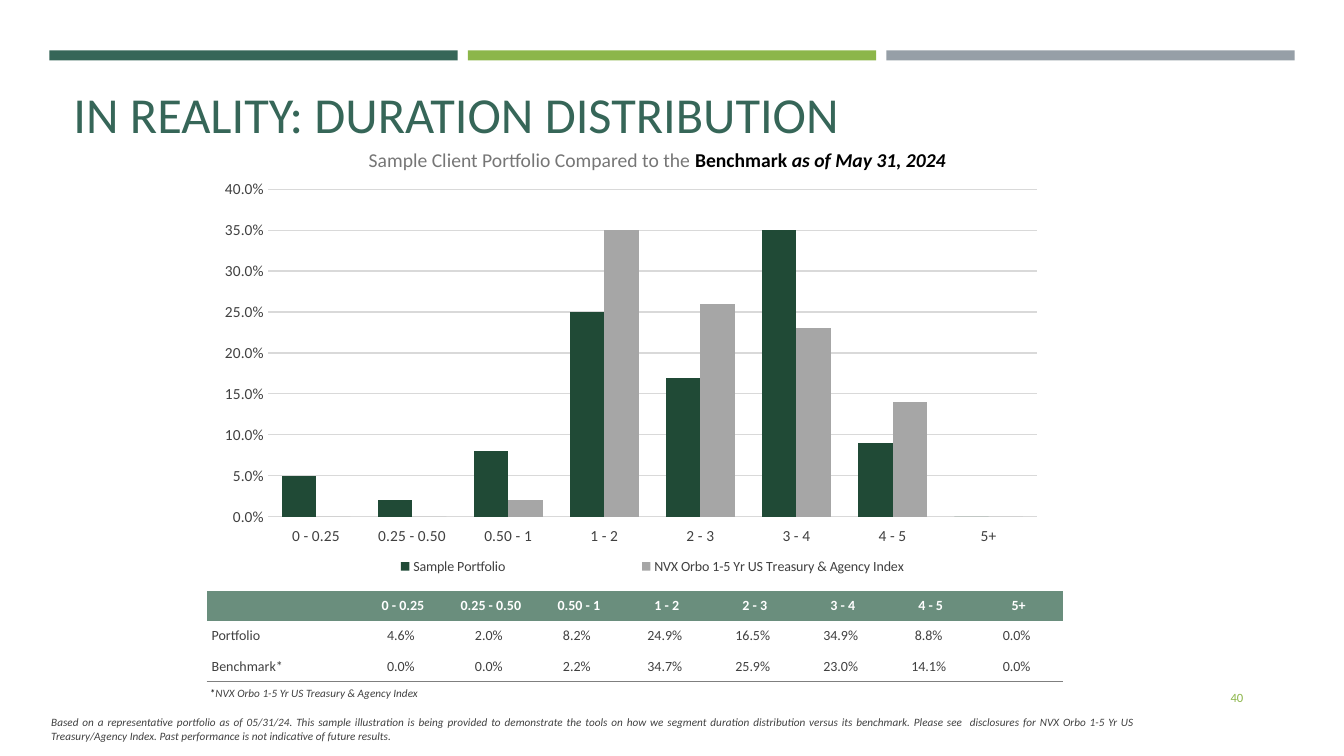
from lxml import etree
from pptx import Presentation
from pptx.chart.data import CategoryChartData
from pptx.dml.color import RGBColor
from pptx.enum.chart import XL_CHART_TYPE, XL_LEGEND_POSITION, XL_TICK_LABEL_POSITION, XL_TICK_MARK
from pptx.enum.shapes import MSO_SHAPE
from pptx.enum.text import MSO_ANCHOR, PP_ALIGN
from pptx.oxml.ns import qn
from pptx.util import Inches, Pt

COLUMNS = XL_CHART_TYPE.COLUMN_CLUSTERED
LEGEND_BOTTOM = XL_LEGEND_POSITION.BOTTOM
LABELS_LOW = XL_TICK_LABEL_POSITION.LOW
NO_TICK = XL_TICK_MARK.NONE
RECT = MSO_SHAPE.RECTANGLE
TOP, MIDDLE, BOTTOM = MSO_ANCHOR.TOP, MSO_ANCHOR.MIDDLE, MSO_ANCHOR.BOTTOM
LEFT, CENTER, RIGHT, JUSTIFY = PP_ALIGN.LEFT, PP_ALIGN.CENTER, PP_ALIGN.RIGHT, PP_ALIGN.JUSTIFY

FONT = "Calibri"
NO_STYLE = "{2D5ABB26-0587-4C30-8999-92F81FD0307C}"
COLORS = {
    "green": "366658", "lime": "8CB64A", "slate": "969FA7", "header": "6A8E7D",
    "portfolio": "204A36", "benchmark": "A6A6A6", "text": "404040", "subtitle": "767676",
    "black": "000000", "white": "FFFFFF", "grid": "D9D9D9", "rule": "7F7F7F",
}
INDEX = "NVX Orbo 1-5 Yr US Treasury & Agency Index"
BUCKETS = ["0 - 0.25", "0.25 - 0.50", "0.50 - 1", "1 - 2", "2 - 3", "3 - 4", "4 - 5", "5+"]
PORTFOLIO = [0.046, 0.02, 0.082, 0.249, 0.165, 0.349, 0.088, 0]
BENCHMARK = [0, 0, 0.022, 0.347, 0.259, 0.23, 0.141, 0]
DISCLOSURE = (
    "Based on a representative portfolio as of 05/31/24. This sample illustration is being "
    "provided to demonstrate the tools on how we segment duration distribution versus its "
    "benchmark. Please see  disclosures for NVX Orbo 1-5 Yr US Treasury/Agency Index. "
    "Past performance is not indicative of future results."
)


def rgb(name):
    """Return the named colour."""
    return RGBColor.from_string(COLORS[name])


def style_font(font, size, color, bold=False, italic=False):
    """Format a font."""
    font.name, font.size, font.bold, font.italic = FONT, Pt(size), bold, italic
    font.color.rgb = rgb(color)


def add_run(p, text, size=10, color="text", bold=False, italic=False):
    """Add formatted text to a paragraph."""
    r = p.add_run()
    r.text = text
    style_font(r.font, size, color, bold, italic)


def add_text(s, box, align=LEFT, anchor=TOP, inset=None):
    """Add a wrapping text box and return its paragraph."""
    tf = s.shapes.add_textbox(*map(Inches, box)).text_frame
    tf.word_wrap = True
    tf.vertical_anchor = anchor
    if inset is not None:
        tf.margin_left = tf.margin_top = tf.margin_right = tf.margin_bottom = Inches(inset)
    p = tf.paragraphs[0]
    p.alignment = align
    return p


def add_bands(s, x, y, w, h, gap=0.1):
    """Draw the three equal colour bands across the box."""
    band_w = (w - 2 * gap) / 3
    for i, color in enumerate(["green", "lime", "slate"]):
        left = x + i * (band_w + gap)
        sp = s.shapes.add_shape(RECT, Inches(left), Inches(y), Inches(band_w), Inches(h))
        sp.shadow.inherit = False
        sp.fill.solid()
        sp.fill.fore_color.rgb = rgb(color)
        sp.line.fill.background()


def add_heading(s, x, y, w, h):
    """Write the title with the subtitle centred below it."""
    p = add_text(s, (x, y, w, h), anchor=BOTTOM)
    add_run(p, "IN REALITY: DURATION DISTRIBUTION", size=36, color="green")
    p = add_text(s, (x + 2.74, y + h, 6.3, 0.24), align=CENTER, inset=0)
    add_run(p, "Sample Client Portfolio Compared to the ", size=14, color="subtitle")
    add_run(p, "Benchmark ", size=14, color="black", bold=True)
    add_run(p, "as of May 31, 2024", size=14, color="black", bold=True, italic=True)


def set_layout(part, index, x, y, w, h, **target):
    """Place a chart part at fractions of the chart."""
    for old in part.findall(qn("c:layout")):
        part.remove(old)
    layout = etree.Element(qn("c:layout"))
    manual = etree.SubElement(layout, qn("c:manualLayout"))
    values = {**target, "xMode": "edge", "yMode": "edge", "x": x, "y": y, "w": w, "h": h}
    for tag, value in values.items():
        etree.SubElement(manual, qn(f"c:{tag}")).set("val", str(value))
    part.insert(index, layout)


def add_duration_chart(s, x, y, w, h):
    """Chart the portfolio against its benchmark."""
    data = CategoryChartData(number_format="0.0%")
    data.categories = BUCKETS
    for name, values in (("Sample Portfolio", PORTFOLIO), (INDEX, BENCHMARK)):
        data.add_series(name, [round(v, 2) for v in values])
    chart = s.shapes.add_chart(COLUMNS, *map(Inches, (x, y, w, h)), data).chart
    chart.has_title = False
    style_font(chart.font, 11, "text")
    chart.has_legend = True
    chart.legend.position = LEGEND_BOTTOM
    chart.legend.include_in_layout = False
    style_font(chart.legend.font, 10, "text")
    for axis in (chart.category_axis, chart.value_axis):
        axis.major_tick_mark = axis.minor_tick_mark = NO_TICK
        axis.format.line.fill.background()
        style_font(axis.tick_labels.font, 11, "text")
    chart.category_axis.tick_label_position = LABELS_LOW
    axis = chart.value_axis
    axis.minimum_scale, axis.maximum_scale, axis.major_unit = 0, 0.4, 0.05
    axis.tick_labels.number_format = "0.0%"
    axis.tick_labels.number_format_is_linked = False
    axis.major_gridlines.format.line.color.rgb = rgb("grid")
    axis.major_gridlines.format.line.width = Pt(0.75)
    plot = chart.plots[0]
    plot.gap_width, plot.overlap, plot.vary_by_categories = 80, 0, False
    for series, color in zip(plot.series, ["portfolio", "benchmark"]):
        series.format.fill.solid()
        series.format.fill.fore_color.rgb = rgb(color)
    body = chart._chartSpace.chart
    set_layout(body.plotArea, 0, 0.059, 0.029, 0.922, 0.809, layoutTarget="inner")
    set_layout(body.find(qn("c:legend")), 1, 0.06, 0.92, 0.92, 0.08)


def add_border(cell, side):
    """Rule one side of a table cell."""
    ln = etree.SubElement(cell._tc.get_or_add_tcPr(), qn(f"a:{side}"), w=str(Pt(1)))
    fill = etree.SubElement(ln, qn("a:solidFill"))
    etree.SubElement(fill, qn("a:srgbClr"), val=COLORS["rule"])


def add_duration_table(s, x, y, w, h):
    """Tabulate the duration shares with a footnote row."""
    rows = [[""] + BUCKETS]
    for name, values in (("Portfolio", PORTFOLIO), ("Benchmark*", BENCHMARK)):
        rows.append([name] + [f"{v:.1%} " for v in values])
    rows.append([""] * len(rows[0]))
    table = s.shapes.add_table(len(rows), len(rows[0]), *map(Inches, (x, y, w, h))).table
    table.first_row = table.horz_banding = False
    table._tbl.tblPr.find(qn("a:tableStyleId")).text = NO_STYLE
    label_w, row_h, last = 1.51, 0.3, len(rows) - 1
    for j, col in enumerate(table.columns):
        col.width = Inches(label_w if j == 0 else (w - label_w) / len(BUCKETS))
    for i, row in enumerate(rows):
        table.rows[i].height = Inches(row_h if i < last else h - last * row_h)
        for j, text in enumerate(row):
            cell = table.cell(i, j)
            cell.vertical_anchor = MIDDLE
            cell.margin_top = cell.margin_bottom = 0
            cell.margin_left = Inches(0.05 if j == 0 else 0)
            cell.margin_right = Inches(0.01 if i and j else 0)
            p = cell.text_frame.paragraphs[0]
            p.alignment = CENTER if j else LEFT
            if text:
                add_run(p, text, color="text" if i else "white", bold=i == 0)
            else:
                p._p.get_or_add_endParaRPr().set("sz", "800")
            if i >= last - 1:
                add_border(cell, "lnT" if i == last else "lnB")
            if i == 0:
                cell.fill.solid()
                cell.fill.fore_color.rgb = rgb("header")
            else:
                cell.fill.background()
    note = table.cell(last, 0)
    note.merge(table.cell(last, 1))
    note.margin_left, note.margin_top = Inches(0.03), Inches(0.02)
    p = note.text_frame.paragraphs[0]
    add_run(p, "*", size=8, color="black", italic=True)
    add_run(p, INDEX, size=8, italic=True)


def add_footer(s, x, y, w, h):
    """Write the disclosure and the page number."""
    p = add_text(s, (x, y, w, h), align=JUSTIFY)
    add_run(p, DISCLOSURE, size=8, italic=True)
    p = add_text(s, (x + w - 0.09, y - 0.33, 1.15, 0.4), align=RIGHT, anchor=MIDDLE)
    add_run(p, "40", size=9, color="lime")


def main():
    """Build and save the slide."""
    prs = Presentation()
    prs.slide_width, prs.slide_height = Inches(13.33), Inches(7.5)
    s = prs.slides.add_slide(prs.slide_layouts[6])
    add_bands(s, 0.49, 0.5, 12.35, 0.1)
    add_heading(s, 0.63, 0.57, 11.96, 0.9)
    add_footer(s, 0.41, 7.05, 10.96, 0.37)
    add_duration_chart(s, 2.17, 1.76, 8.27, 4.02)
    add_duration_table(s, 2.05, 5.86, 8.49, 1.13)
    prs.save("out.pptx")


if __name__ == "__main__":
    main()
